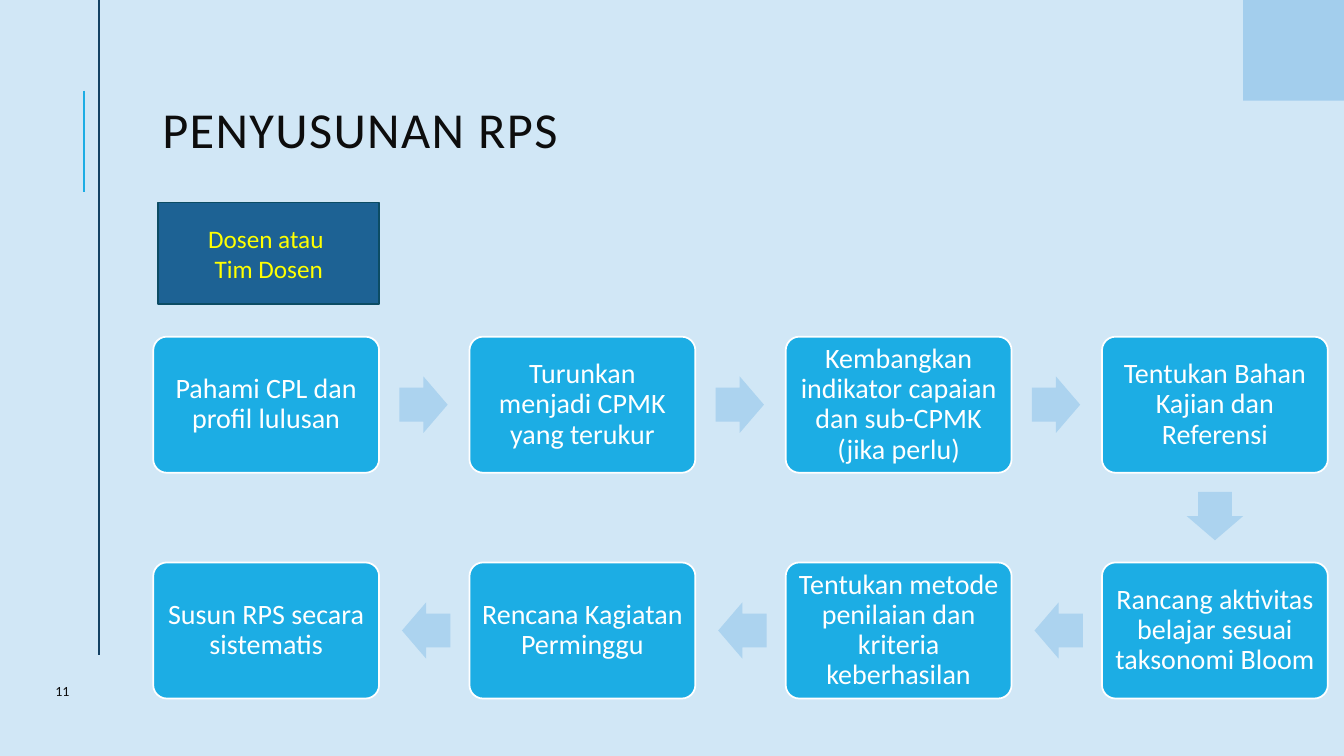
from lxml.etree import SubElement
from pptx import Presentation
from pptx.dml.color import RGBColor
from pptx.enum.shapes import MSO_CONNECTOR, MSO_SHAPE
from pptx.enum.text import MSO_ANCHOR, MSO_AUTO_SIZE, PP_ALIGN
from pptx.oxml.ns import qn
from pptx.util import Inches, Pt

PALE_BLUE = RGBColor(0xD1, 0xE7, 0xF6)
CORNER_BLUE = RGBColor(0xA3, 0xCE, 0xED)
ARROW_BLUE = RGBColor(0xAC, 0xD3, 0xEF)
BRIGHT_BLUE = RGBColor(0x1C, 0xAD, 0xE4)
NAVY = RGBColor(0x13, 0x41, 0x63)
OWNER_BLUE = RGBColor(0x1D, 0x62, 0x94)
OWNER_EDGE = RGBColor(0x0C, 0x4C, 0x64)
INK = RGBColor(0x0D, 0x0D, 0x0D)
WHITE = RGBColor(0xFF, 0xFF, 0xFF)
YELLOW = RGBColor(0xFF, 0xFF, 0x00)

STEPS = [
    "Pahami CPL dan profil lulusan",
    "Turunkan menjadi CPMK yang terukur",
    "Kembangkan indikator capaian dan sub-CPMK (jika perlu)",
    "Tentukan Bahan Kajian dan Referensi",
    "Rancang aktivitas belajar sesuai taksonomi Bloom",
    "Tentukan metode penilaian dan kriteria keberhasilan",
    "Rencana Kagiatan Perminggu",
    "Susun RPS secara sistematis",
]
COLUMNS = 4
FIRST_LEFT, LAST_LEFT = 1.52, 10.93
COLUMN_PITCH = (LAST_LEFT - FIRST_LEFT) / (COLUMNS - 1)
FIRST_TOP, ROW_PITCH = 3.34, 2.24
STEP_WIDTH, STEP_HEIGHT = 2.24, 1.35
ARROW_WIDTH, ARROW_HEIGHT = 0.48, 0.56


class SlideBuilder:
    font_name = "Calibri"

    def __init__(self, slide):
        self.slide = slide
        background = slide.background.fill
        background.solid()
        background.fore_color.rgb = PALE_BLUE

    def set_text(self, frame, lines, size, color, align=PP_ALIGN.CENTER, spacing=1.0):
        frame.word_wrap = True
        frame.auto_size = MSO_AUTO_SIZE.NONE
        frame.vertical_anchor = MSO_ANCHOR.MIDDLE
        frame.text = "\n".join(lines)
        for paragraph in frame.paragraphs:
            paragraph.alignment = align
            paragraph.line_spacing = spacing
            paragraph.font.name = self.font_name
            paragraph.font.size = Pt(size)
            paragraph.font.color.rgb = color

    def title(self, text, left, top, width, height):
        shape = self.slide.shapes.title
        shape.left, shape.top = Inches(left), Inches(top)
        shape.width, shape.height = Inches(width), Inches(height)
        frame = shape.text_frame
        frame.margin_left = 0
        self.set_text(frame, [text], 36, INK, PP_ALIGN.LEFT, 0.8)
        frame.paragraphs[0].runs[0].font._element.set("spc", "100")

    def label(self, text, left, top, width, height):
        box = self.slide.shapes.add_textbox(
            Inches(left), Inches(top), Inches(width), Inches(height))
        self.set_text(box.text_frame, [text], 10, INK, PP_ALIGN.LEFT)

    def line(self, x, top, bottom, color):
        connector = self.slide.shapes.add_connector(
            MSO_CONNECTOR.STRAIGHT, Inches(x), Inches(top), Inches(x), Inches(bottom))
        connector.line.color.rgb = color
        connector.line.width = Pt(1.5)
        SubElement(connector._element.spPr, qn("a:effectLst"))

    def shape(self, kind, left, top, width, height, fill, edge=None):
        shape = self.slide.shapes.add_shape(
            kind, Inches(left), Inches(top), Inches(width), Inches(height))
        shape.shadow.inherit = False
        shape.fill.solid()
        shape.fill.fore_color.rgb = fill
        if edge is None:
            shape.line.fill.background()
        else:
            shape.line.color.rgb = edge
            shape.line.width = Pt(1.25)
        return shape

    def step(self, text, left, top):
        box = self.shape(MSO_SHAPE.ROUNDED_RECTANGLE, left, top,
                         STEP_WIDTH, STEP_HEIGHT, BRIGHT_BLUE, WHITE)
        box.adjustments[0] = 0.1
        frame = box.text_frame
        frame.margin_left = frame.margin_right = Inches(0.08)
        frame.margin_top = frame.margin_bottom = Inches(0.08)
        self.set_text(frame, [text], 20, WHITE, spacing=0.9)

    def arrow(self, left, top, rotation):
        arrow = self.shape(MSO_SHAPE.RIGHT_ARROW, left, top,
                           ARROW_WIDTH, ARROW_HEIGHT, ARROW_BLUE)
        arrow.adjustments[0] = 0.6
        arrow.adjustments[1] = 0.5
        arrow.rotation = rotation

    def process(self, steps):
        """Lay the steps out rightwards, then back leftwards on the next row."""
        for index, text in enumerate(steps):
            row, position = divmod(index, COLUMNS)
            column = position if row == 0 else COLUMNS - 1 - position
            left = FIRST_LEFT + column * COLUMN_PITCH
            top = FIRST_TOP + row * ROW_PITCH
            self.step(text, left, top)
            if index == len(steps) - 1:
                break
            arrow_top = top + (STEP_HEIGHT - ARROW_HEIGHT) / 2
            if position == COLUMNS - 1:
                self.arrow(left + (STEP_WIDTH - ARROW_WIDTH) / 2, top + 1.5, 90)
            elif row == 0:
                self.arrow(left + 2.44, arrow_top, 0)
            else:
                self.arrow(left - 0.67, arrow_top, 180)


def main():
    presentation = Presentation()
    presentation.slide_width = Inches(13.33)
    presentation.slide_height = Inches(7.5)
    builder = SlideBuilder(presentation.slides.add_slide(presentation.slide_layouts[5]))

    builder.line(0.83, 0.9, 1.9, BRIGHT_BLUE)
    builder.line(0.98, 0, 6.5, NAVY)
    builder.shape(MSO_SHAPE.RECTANGLE, 12.33, 0, 1, 1, CORNER_BLUE)
    builder.title("PENYUSUNAN RPS", 1.61, 0.55, 10.01, 1.56)
    builder.label("11", 0.45, 6.5, 1.06, 0.71)
    builder.process(STEPS)
    owner = builder.shape(MSO_SHAPE.RECTANGLE, 1.57, 2.01, 2.19, 1.01,
                          OWNER_BLUE, OWNER_EDGE)
    builder.set_text(owner.text_frame, ["Dosen atau ", "Tim Dosen"], 18, YELLOW)

    presentation.save("out.pptx")


if __name__ == "__main__":
    main()
